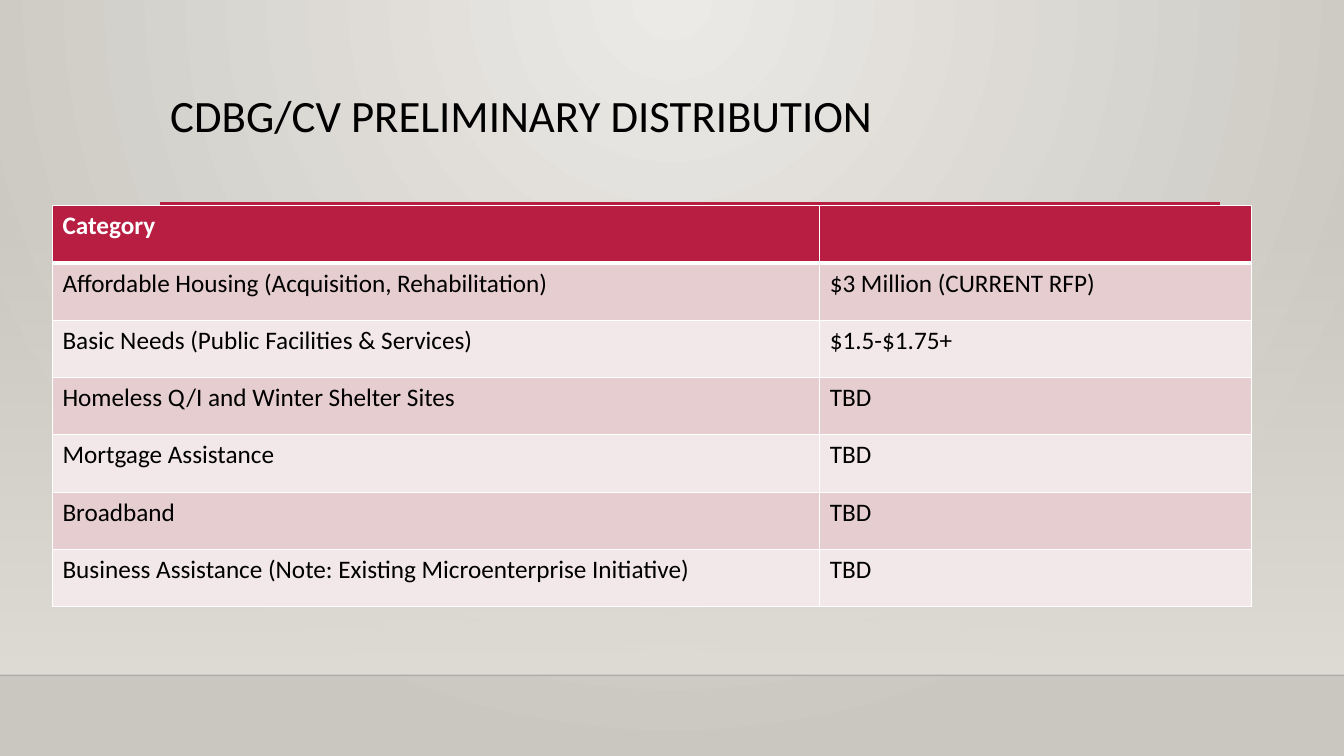
from lxml import etree
from pptx import Presentation
from pptx import util as u
from pptx.dml.color import RGBColor
from pptx.enum import shapes, text
from pptx.oxml import parse_xml
from pptx.oxml.ns import nsdecls, qn

BLACK = RGBColor(0x00, 0x00, 0x00)
WHITE = RGBColor(0xFF, 0xFF, 0xFF)
CRIMSON = RGBColor(0xB7, 0x1E, 0x42)
ROSE = RGBColor(0xE6, 0xCD, 0xCF)
PALE_ROSE = RGBColor(0xF3, 0xE8, 0xE9)
GLOW = RGBColor(0xEC, 0xEA, 0xE7)
STONE = RGBColor(0xCA, 0xC7, 0xC1)
SAND = RGBColor(0xDF, 0xDB, 0xD5)
FONT = "Calibri"

ROWS = [
    ("Category", ""),
    ("Affordable Housing (Acquisition, Rehabilitation)", "$3 Million (CURRENT RFP)"),
    ("Basic Needs (Public Facilities & Services)", "$1.5-$1.75+"),
    ("Homeless Q/I and Winter Shelter Sites", "TBD"),
    ("Mortgage Assistance", "TBD"),
    ("Broadband", "TBD"),
    ("Business Assistance (Note: Existing Microenterprise Initiative)", "TBD"),
]
COLUMN_WIDTHS = (7.61, 4.28)
ROW_HEIGHT = 3.98 / len(ROWS)
FLOOR = 6.7
WALL_TOP = 2.21
TITLE_LEFT = 1.59


def set_alpha(color_parent, percent):
    color = color_parent.find(".//" + qn("a:srgbClr"))
    etree.SubElement(color, qn("a:alpha")).set("val", str(percent * 1000))


def add_rule(left, right, top, color, width):
    rule = slide.shapes.add_connector(
        shapes.MSO_CONNECTOR.STRAIGHT,
        u.Inches(left), u.Inches(top), u.Inches(right), u.Inches(top))
    rule.line.color.rgb = color
    rule.line.width = u.Pt(width)
    etree.SubElement(rule._element.spPr, qn("a:effectLst"))
    return rule


prs = Presentation()
prs.slide_width = u.Inches(13.33)
prs.slide_height = u.Inches(7.5)
slide = prs.slides.add_slide(prs.slide_layouts[6])

# Radial background, brightest at the top centre
backdrop = slide.background.fill
backdrop.gradient()
for stop, color in zip(backdrop.gradient_stops, (GLOW, STONE)):
    stop.color.rgb = color
linear = slide._element.find(".//" + qn("a:lin"))
linear.getparent().replace(linear, parse_xml(
    f'<a:path {nsdecls("a")} path="circle">'
    '<a:fillToRect l="43000" t="0" r="43000" b="100000"/></a:path>'))

# Wall that fades in downwards to the floor line
wall = slide.shapes.add_shape(
    shapes.MSO_SHAPE.RECTANGLE, 0, u.Inches(WALL_TOP),
    prs.slide_width, u.Inches(FLOOR - WALL_TOP))
wall.shadow.inherit = False
wall.line.fill.background()
wall.fill.gradient()
wall.fill.gradient_angle = 270
for stop in wall.fill.gradient_stops:
    stop.color.rgb = SAND
set_alpha(wall._element.spPr.find(".//" + qn("a:gs")), 0)

floor_line = add_rule(0, 13.33, FLOOR, BLACK, 1)
set_alpha(floor_line._element.spPr, 20)
add_rule(TITLE_LEFT, 12.1, 2.02, CRIMSON, 2.5)

title = slide.shapes.add_textbox(
    u.Inches(TITLE_LEFT), u.Inches(0.88), u.Inches(10.5), u.Inches(1.15)).text_frame
title.word_wrap = True
title.vertical_anchor = text.MSO_ANCHOR.TOP
heading = title.paragraphs[0]
heading.text = "CDBG/CV PRELIMINARY DISTRIBUTION"
heading.line_spacing = 0.9
heading.font.name = FONT
heading.font.size = u.Pt(32)
heading.font.color.rgb = BLACK

distribution = slide.shapes.add_table(
    len(ROWS), len(COLUMN_WIDTHS), u.Inches(0.52), u.Inches(2.04),
    u.Inches(sum(COLUMN_WIDTHS)), u.Inches(ROW_HEIGHT * len(ROWS))).table
for column, width in zip(distribution.columns, COLUMN_WIDTHS):
    column.width = u.Inches(width)

for r, entries in enumerate(ROWS):
    distribution.rows[r].height = u.Inches(ROW_HEIGHT)
    is_header = r == 0
    for c, entry in enumerate(entries):
        cell = distribution.cell(r, c)
        cell.fill.solid()
        cell.fill.fore_color.rgb = CRIMSON if is_header else (PALE_ROSE, ROSE)[r % 2]
        label = cell.text_frame.paragraphs[0]
        label.text = entry
        label.font.name = FONT
        label.font.size = u.Pt(18)
        label.font.bold = is_header
        label.font.color.rgb = WHITE if is_header else BLACK

        # The edge between header and body is thicker
        borders = {"L": 1, "R": 1, "T": 3 if r == 1 else 1, "B": 3 if is_header else 1}
        for i, (side, width) in enumerate(borders.items()):
            cell._tc.get_or_add_tcPr().insert(i, parse_xml(
                f'<a:ln{side} {nsdecls("a")} w="{u.Pt(width)}"><a:solidFill>'
                f'<a:srgbClr val="{WHITE}"/></a:solidFill></a:ln{side}>'))

prs.save("out.pptx")
